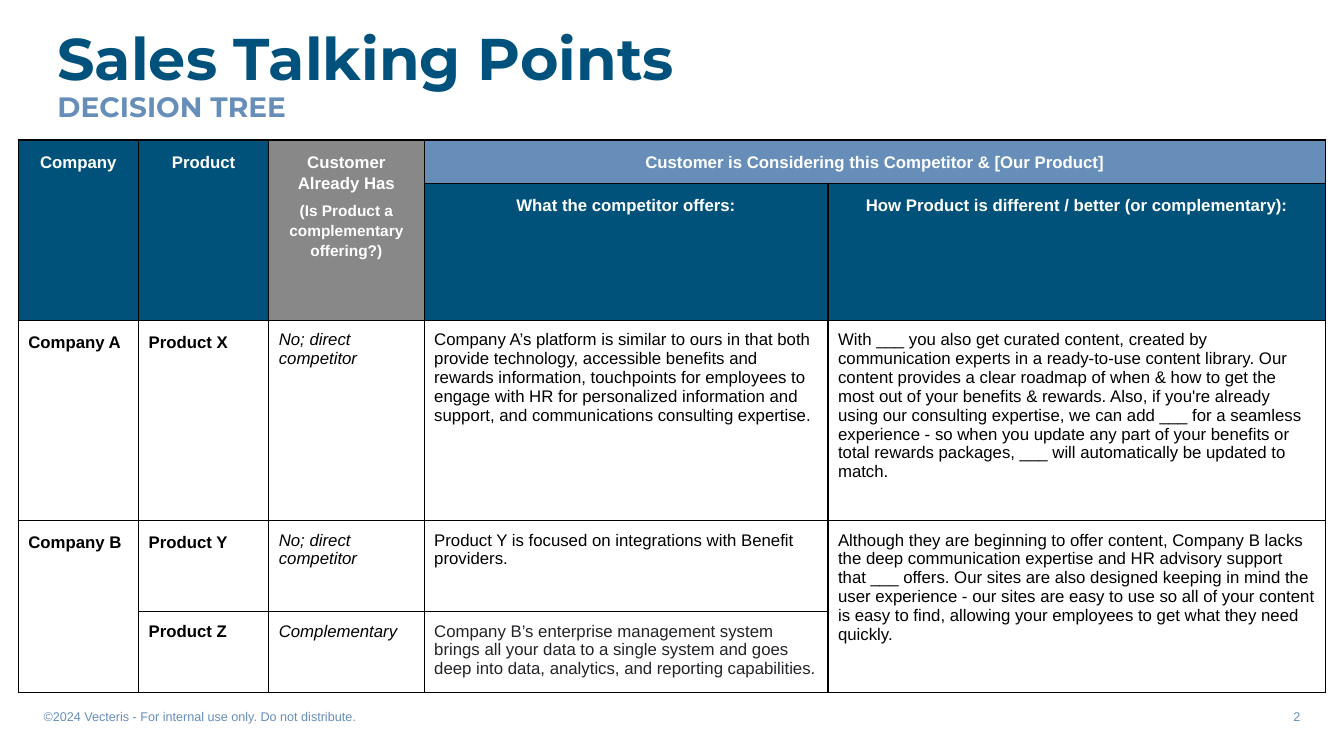
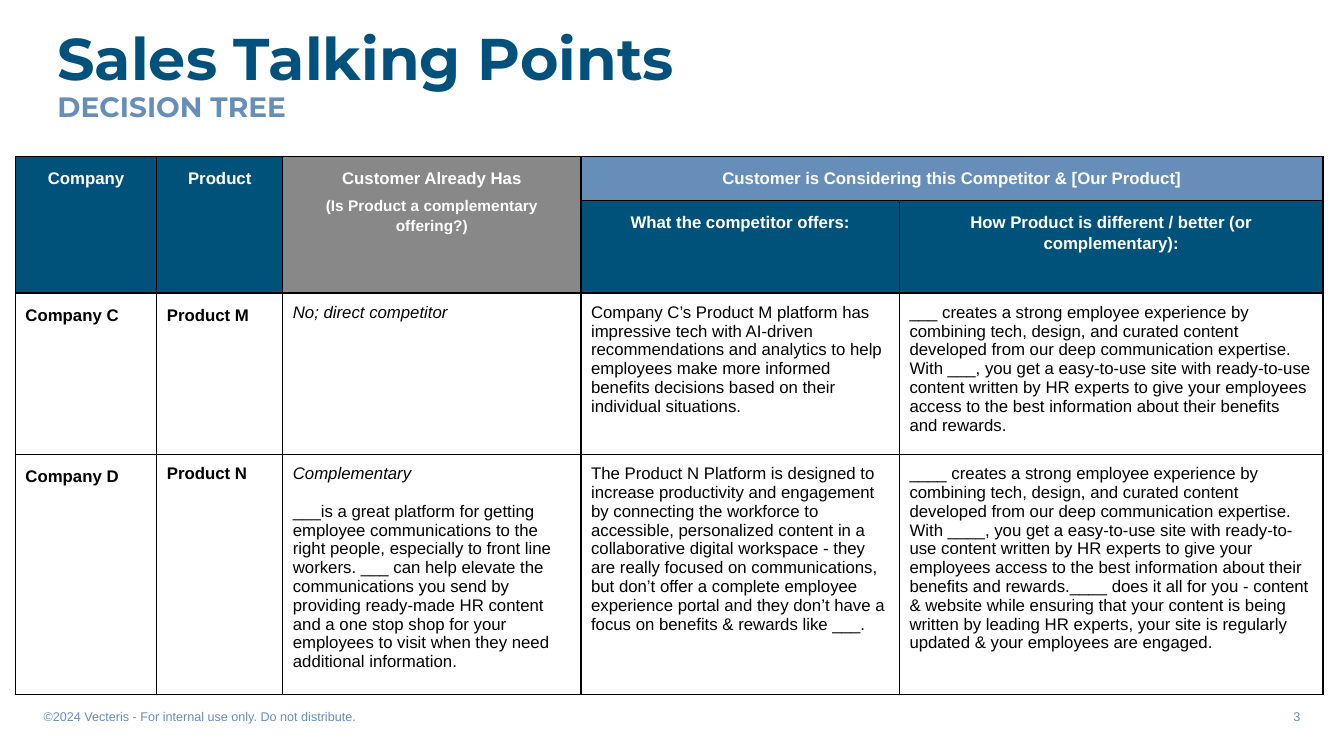
import pptx
import pptx.dml.color
import pptx.enum.shapes
import pptx.enum.text
import pptx.oxml
import pptx.oxml.ns
import pptx.util

Pt = pptx.util.Pt
RGBColor = pptx.dml.color.RGBColor
ALIGN = pptx.enum.text.PP_ALIGN

NAVY = RGBColor(0x00, 0x52, 0x7B)
TITLE_NAVY = RGBColor(0x00, 0x52, 0x7C)
BLUE = RGBColor(0x66, 0x8E, 0xB9)
GRAY = RGBColor(0x88, 0x88, 0x88)
WHITE = RGBColor(0xFF, 0xFF, 0xFF)
BLACK = RGBColor(0x00, 0x00, 0x00)
CHARCOAL = RGBColor(0x22, 0x24, 0x27)

PAGE_WIDTH, PAGE_HEIGHT = 960, 540
CELL_MARGIN = 7.2
BLANK_LAYOUT = 6

TITLE = {"font": {"name": "Montserrat", "size": Pt(42), "bold": True}, "color": TITLE_NAVY,
         "para": {"line_spacing": 0.9}}
SUBTITLE = {"font": {"name": "Montserrat", "size": Pt(20), "bold": True}, "color": BLUE,
            "para": {"line_spacing": 0.9}}
FOOTER = {"font": {"name": "Arial", "size": Pt(9)}, "color": BLUE, "para": {}}
PAGE_NUMBER = {**FOOTER, "para": {"alignment": ALIGN.RIGHT}}

HEADING = {"font": {"name": "Arial", "size": Pt(12), "bold": True}, "color": WHITE,
           "para": {"alignment": ALIGN.CENTER, "line_spacing": 1.15}}
HEADING_NOTE = {"font": {**HEADING["font"], "size": Pt(11)}, "color": WHITE,
                "para": {**HEADING["para"], "space_before": Pt(5)}}
BODY = {"font": {"name": "Arial", "size": Pt(12)}, "color": BLACK, "para": {}}
BODY_CHARCOAL = {**BODY, "color": CHARCOAL}
BODY_AFTER_GAP = {**BODY, "para": {"space_before": Pt(13.4)}}
STATUS = {**BODY, "font": {**BODY["font"], "italic": True}}
LABEL_TIGHT = {**BODY, "font": {**BODY["font"], "bold": True}}
LABEL = {**LABEL_TIGHT, "para": {"line_spacing": 1.15}}

HEADER_ROWS = [
    [
        (NAVY, [("Company", HEADING)]),
        (NAVY, [("Product", HEADING)]),
        (GRAY, [("Customer Already Has", HEADING),
                ("(Is Product a complementary offering?)", HEADING_NOTE)]),
        (BLUE, [("Customer is Considering this Competitor & [Our Product]", HEADING)]),
        (BLUE, []),
    ],
    [
        (NAVY, []),
        (NAVY, []),
        (GRAY, []),
        (NAVY, [("What the competitor offers:", HEADING)]),
        (NAVY, [("How Product is different / better (or complementary):", HEADING)]),
    ],
]
HEADER_MERGES = [((0, 0), (1, 0)), ((0, 1), (1, 1)), ((0, 2), (1, 2)), ((0, 3), (0, 4))]

FIRST_TABLE = {
    "left": 13, "top": 100,
    "columns": [86, 93, 111, 288.5, 355.5],
    "heights": [30, 94, 143, 65, 55],
    "merges": [((3, 0), (4, 0)), ((3, 4), (4, 4))],
    "rows": [
        [
            [("Company A", LABEL)],
            [("Product X", LABEL)],
            [("No; direct competitor", STATUS)],
            [("Company A’s platform is similar to ours in that both provide technology, "
              "accessible benefits and rewards information, touchpoints for employees to engage "
              "with HR for personalized information and support, and communications consulting "
              "expertise.", BODY)],
            [("With ___ you also get curated content, created by communication experts in a "
              "ready-to-use content library. Our content provides a clear roadmap of when & how "
              "to get the most out of your benefits & rewards. Also, if you're already using our "
              "consulting expertise, we can add ___ for a seamless experience - so when you "
              "update any part of your benefits or total rewards packages, ___ will "
              "automatically be updated to match.", BODY)],
        ],
        [
            [("Company B", LABEL)],
            [("Product Y", LABEL)],
            [("No; direct competitor", STATUS)],
            [("Product Y is focused on integrations with Benefit providers.", BODY)],
            [("Although they are beginning to offer content, Company B lacks the deep "
              "communication expertise and HR advisory support that ___ offers. Our sites are "
              "also designed keeping in mind the user experience - our sites are easy to use so "
              "all of your content is easy to find, allowing your employees to get what they "
              "need quickly.", BODY)],
        ],
        [
            [],
            [("Product Z", LABEL_TIGHT)],
            [("Complementary", STATUS)],
            [("Company B’s enterprise management system brings all your data to a single system "
              "and goes deep into data, analytics, and reporting capabilities.", BODY_CHARCOAL)],
            [],
        ],
    ],
}

SECOND_TABLE = {
    "left": 11, "top": 112,
    "columns": [101, 90, 213, 227.5, 302.5],
    "heights": [30, 65, 110, 162],
    "merges": [],
    "rows": [
        [
            [("Company C", LABEL)],
            [("Product M", LABEL)],
            [("No; direct competitor", STATUS)],
            [("Company C’s Product M platform has impressive tech with AI-driven recommendations "
              "and analytics to help employees make more informed benefits decisions based on "
              "their individual situations.", BODY)],
            [("___ creates a strong employee experience by combining tech, design, and curated "
              "content developed from our deep communication expertise. With ___, you get a "
              "easy-to-use site with ready-to-use content written by HR experts to give your "
              "employees access to the best information about their benefits and rewards.", BODY)],
        ],
        [
            [("Company D", LABEL)],
            [("Product N", LABEL_TIGHT)],
            [("Complementary", STATUS),
             ("___is a great platform for getting employee communications to the right people, "
              "especially to front line workers. ___ can help elevate the communications you "
              "send by providing ready-made HR content and a one stop shop for your employees "
              "to visit when they need additional information.", BODY_AFTER_GAP)],
            [("The Product N Platform is designed to increase productivity and engagement by "
              "connecting the workforce to accessible, personalized content in a collaborative "
              "digital workspace - they are really focused on communications, but don’t offer a "
              "complete employee experience portal and they don’t have a focus on benefits & "
              "rewards like ___.", BODY)],
            [("____ creates a strong employee experience by combining tech, design, and curated "
              "content developed from our deep communication expertise. With ____, you get a "
              "easy-to-use site with ready-to-use content written by HR experts to give your "
              "employees access to the best information about their benefits and rewards.____ "
              "does it all for you - content & website while ensuring that your content is being "
              "written by leading HR experts, your site is regularly updated & your employees "
              "are engaged.", BODY)],
        ],
    ],
}


def set_attributes(target, values):
    for name, value in values.items():
        setattr(target, name, value)


def write_lines(frame, lines):
    frame.word_wrap = True
    for index, (text, style) in enumerate(lines):
        para = frame.add_paragraph() if index else frame.paragraphs[0]
        set_attributes(para, style["para"])
        span = para.add_run()
        span.text = text
        set_attributes(span.font, style["font"])
        span.font.color.rgb = style["color"]


def add_text(page, left, top, width, height, lines):
    box = page.shapes.add_textbox(Pt(left), Pt(top), Pt(width), Pt(height))
    write_lines(box.text_frame, lines)


def add_footer(page, left, top, width, number):
    rule = page.shapes.add_connector(
        pptx.enum.shapes.MSO_CONNECTOR.STRAIGHT,
        Pt(left), Pt(top), Pt(left + width), Pt(top))
    rule.line.color.rgb = BLUE
    rule.line.width = Pt(1)
    properties = rule._element.spPr
    properties.append(properties.makeelement(pptx.oxml.ns.qn("a:effectLst"), {}))
    text_width, text_top = 384, top + 10
    add_text(page, left - 8, text_top, text_width, 18,
             [("©2024 Vecteris - For internal use only. Do not distribute.", FOOTER)])
    add_text(page, left + width + 8 - text_width, text_top, text_width, 18,
             [(str(number), PAGE_NUMBER)])


def add_borders(cell):
    properties = cell._tc.get_or_add_tcPr()
    for side in ("lnL", "lnR", "lnT", "lnB"):
        properties.append(pptx.oxml.parse_xml(
            f'<a:{side} {pptx.oxml.ns.nsdecls("a")} w="{Pt(1)}"><a:solidFill>'
            f'<a:srgbClr val="{BLACK}"/></a:solidFill></a:{side}>'))


def add_decision_table(page, left, top, columns, heights, rows, merges):
    body = [[(WHITE, lines) for lines in row] for row in rows]
    content = HEADER_ROWS + body
    table = page.shapes.add_table(
        len(content), len(columns), Pt(left), Pt(top),
        Pt(sum(columns)), Pt(sum(heights))).table
    set_attributes(table, {"first_row": False, "horz_banding": False})
    for column, width in zip(table.columns, columns):
        column.width = Pt(width)
    for row, height in zip(table.rows, heights):
        row.height = Pt(height)
    margins = {f"margin_{side}": Pt(CELL_MARGIN) for side in ("left", "right", "top", "bottom")}
    for row_index, row in enumerate(content):
        for column_index, (color, lines) in enumerate(row):
            cell = table.cell(row_index, column_index)
            set_attributes(cell, margins)
            add_borders(cell)
            cell.fill.solid()
            cell.fill.fore_color.rgb = color
            write_lines(cell.text_frame, lines)
    for first, last in HEADER_MERGES + merges:
        table.cell(*first).merge(table.cell(*last))


def add_talking_points_page(deck, number, table):
    page = deck.slides.add_slide(deck.slide_layouts[BLANK_LAYOUT])
    add_footer(page, 32, 492.5, PAGE_WIDTH - 64, number)
    add_text(page, 34, 18, 545, 107,
             [("Sales Talking Points", TITLE), ("DECISION TREE", SUBTITLE)])
    add_decision_table(page, **table)


def main():
    deck = pptx.Presentation()
    set_attributes(deck, {"slide_width": Pt(PAGE_WIDTH), "slide_height": Pt(PAGE_HEIGHT)})
    for number, table in enumerate((FIRST_TABLE, SECOND_TABLE), start=2):
        add_talking_points_page(deck, number, table)
    deck.save("out.pptx")


if __name__ == "__main__":
    main()
